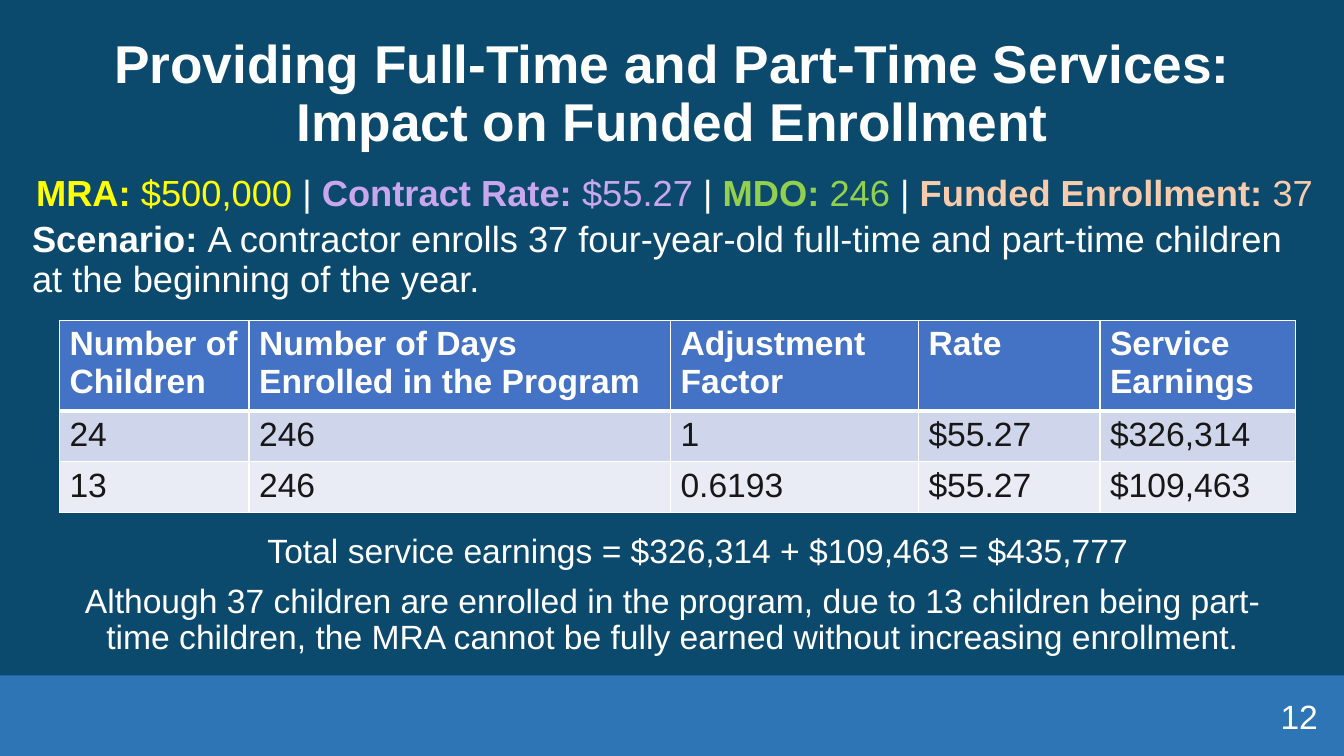
from lxml.etree import SubElement
from pptx import Presentation
from pptx.dml.color import RGBColor
from pptx.enum.shapes import MSO_SHAPE
from pptx.enum.text import MSO_ANCHOR, PP_ALIGN
from pptx.oxml.ns import qn
from pptx.util import Inches, Pt

NAVY = RGBColor(0x0C, 0x4A, 0x6D)
BAND = RGBColor(0x2E, 0x75, 0xB6)
WHITE = RGBColor(0xFF, 0xFF, 0xFF)
INK = RGBColor(0x18, 0x17, 0x17)
YELLOW = RGBColor(0xFF, 0xFF, 0x00)
LILAC = RGBColor(0xC9, 0xA7, 0xEE)
GREEN = RGBColor(0x92, 0xD0, 0x50)
PEACH = RGBColor(0xF8, 0xCB, 0xAD)
HEADER = RGBColor(0x44, 0x72, 0xC4)
ROW_FILLS = [RGBColor(0xCF, 0xD5, 0xEA), RGBColor(0xE9, 0xEB, 0xF5)]

TITLE = "Providing Full-Time and Part-Time Services:\vImpact on Funded Enrollment"
FACTS = [
    ("MRA:", "$500,000", YELLOW),
    ("Contract Rate:", "$55.27", LILAC),
    ("MDO:", "246", GREEN),
    ("Funded Enrollment:", "37", PEACH),
]
SCENARIO = [
    ("Scenario: ", WHITE, True),
    ("A contractor enrolls 37 four-year-old full-time and part-time children "
     "at the beginning of the year.", WHITE, False),
]
TABLE = [
    ["Number of Children", "Number of Days Enrolled in the Program",
     "Adjustment Factor", "Rate", "Service Earnings"],
    ["24", "246", "1", "$55.27", "$326,314"],
    ["13", "246", "0.6193", "$55.27", "$109,463"],
]
COL_WIDTHS = [1.88, 4.18, 2.46, 1.8, 1.94]
ROW_HEIGHTS = [0.84, 0.47, 0.47]
TOTAL = "Total service earnings = $326,314 + $109,463 = $435,777"
CONCLUSION = ("Although 37 children are enrolled in the program, due to 13 children "
              "being part-time children, the MRA cannot be fully earned without "
              "increasing enrollment.")
PAGE = "12"


def write(p, text, size=24, color=WHITE, bold=False, align=PP_ALIGN.LEFT,
          line=None, before=0):
    runs = [(text, color, bold)] if isinstance(text, str) else text
    p.alignment = align
    p.space_before = Pt(before)
    if line:
        p.line_spacing = line
    for words, run_color, run_bold in runs:
        for i, part in enumerate(words.split("\v")):
            if i:
                p.add_line_break()
            r = p.add_run()
            r.text = part
            r.font.name = "Arial"
            r.font.size = Pt(size)
            r.font.bold = run_bold
            r.font.color.rgb = run_color


def add_box(s, left, top, width, height, anchor=MSO_ANCHOR.TOP):
    tf = s.shapes.add_textbox(Inches(left), Inches(top),
                              Inches(width), Inches(height)).text_frame
    tf.word_wrap = True
    tf.vertical_anchor = anchor
    return tf


def set_border(cell, side, points):
    ln = SubElement(cell._tc.get_or_add_tcPr(), qn(f"a:{side}"), w=str(Pt(points)))
    fill = SubElement(ln, qn("a:solidFill"))
    SubElement(fill, qn("a:srgbClr"), val=str(WHITE))


def add_earnings_table(s):
    table = s.shapes.add_table(
        len(TABLE), len(COL_WIDTHS), Inches(0.59), Inches(3.18),
        Inches(sum(COL_WIDTHS)), Inches(sum(ROW_HEIGHTS))).table
    for col, width in zip(table.columns, COL_WIDTHS):
        col.width = Inches(width)
    for i, values in enumerate(TABLE):
        table.rows[i].height = Inches(ROW_HEIGHTS[i])
        for j, value in enumerate(values):
            cell = table.cell(i, j)
            for side in ("lnL", "lnR", "lnT", "lnB"):
                thick = (i, side) in ((0, "lnB"), (1, "lnT"))
                set_border(cell, side, 3 if thick else 1)
            cell.fill.solid()
            cell.fill.fore_color.rgb = ROW_FILLS[i - 1] if i else HEADER
            write(cell.text_frame.paragraphs[0], value,
                  color=INK if i else WHITE, bold=i == 0)


def main():
    prs = Presentation()
    prs.slide_width, prs.slide_height = Inches(13.33), Inches(7.5)
    s = prs.slides.add_slide(prs.slide_layouts[5])
    s.background.fill.solid()
    s.background.fill.fore_color.rgb = NAVY

    band = s.shapes.add_shape(MSO_SHAPE.RECTANGLE, 0, Inches(6.7),
                              prs.slide_width, Inches(0.8))
    band.shadow.inherit = False
    band.fill.solid()
    band.fill.fore_color.rgb = BAND
    band.line.fill.background()

    title = s.shapes.title
    title.left, title.top = Inches(0.17), Inches(0.22)
    title.width, title.height = Inches(13), Inches(1.45)
    title.text_frame.vertical_anchor = MSO_ANCHOR.MIDDLE
    write(title.text_frame.paragraphs[0], TITLE, size=38, bold=True,
          align=PP_ALIGN.CENTER, line=0.9)

    facts = []
    for label, value, color in FACTS:
        if facts:
            facts.append((" | ", WHITE, False))
        facts += [(label, color, True), (f" {value}", color, False)]
    tf = add_box(s, 0.22, 1.69, 12.94, 1.45)
    write(tf.paragraphs[0], facts, size=25.9, align=PP_ALIGN.CENTER, line=0.9, before=5)
    write(tf.add_paragraph(), SCENARIO, size=25.9, line=0.9, before=5)

    add_earnings_table(s)

    tf = add_box(s, 0.59, 5.25, 12.16, 1.38)
    p = tf.paragraphs[0]
    write(p, TOTAL, align=PP_ALIGN.CENTER, line=0.9, before=5)
    p._p.get_or_add_pPr().set("marL", str(Inches(0.5)))
    write(tf.add_paragraph(), CONCLUSION, align=PP_ALIGN.CENTER, line=0.9, before=10)

    tf = add_box(s, 10.17, 6.9, 3, 0.4, MSO_ANCHOR.MIDDLE)
    write(tf.paragraphs[0], PAGE, align=PP_ALIGN.RIGHT)

    prs.save("out.pptx")


if __name__ == "__main__":
    main()
